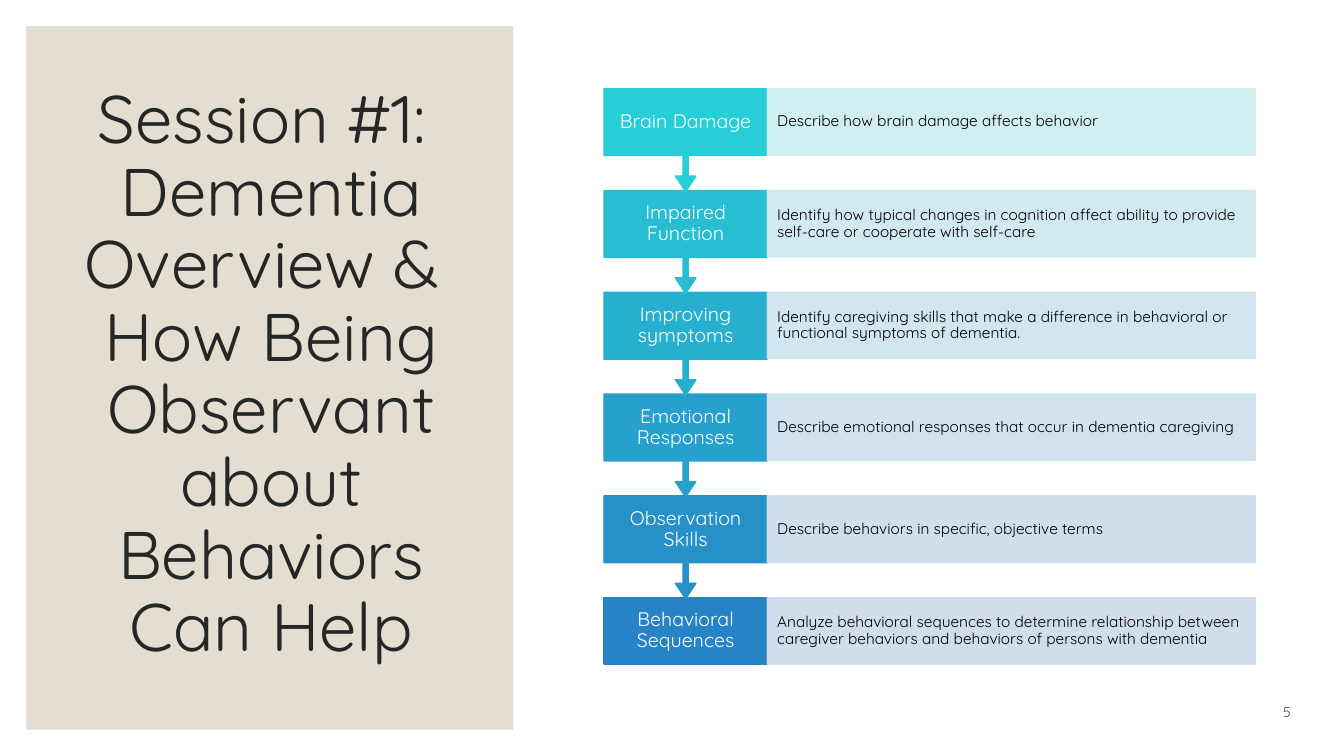
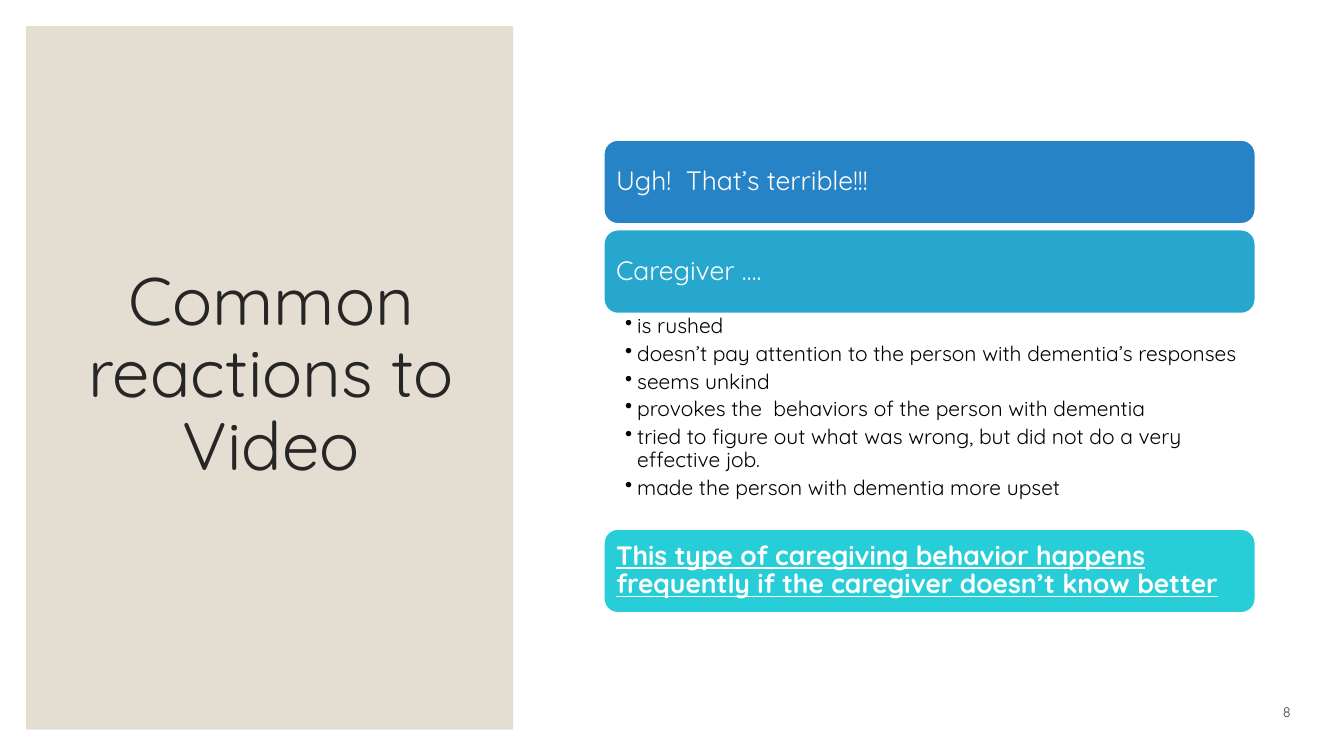
import dataclasses

import lxml.etree
import pptx
import pptx.dml.color
import pptx.enum.shapes
import pptx.enum.text
import pptx.oxml.ns
import pptx.util

Inches, Pt = pptx.util.Inches, pptx.util.Pt
RGB = pptx.dml.color.RGBColor.from_string
SHAPE = pptx.enum.shapes.MSO_SHAPE
ALIGN = pptx.enum.text.PP_ALIGN
ANCHOR = pptx.enum.text.MSO_ANCHOR
qn = pptx.oxml.ns.qn


@dataclasses.dataclass(frozen=True)
class Theme:
    font: str = "Quicksand"
    # Colours
    white: str = "FFFFFF"
    black: str = "000000"
    band: str = "E3DED1"
    title: str = "262626"
    number: str = "404040"
    blue: str = "2683C6"
    sky: str = "27A7CE"
    turquoise: str = "27CED7"
    # Type sizes
    title_size: int = 48
    card_size: int = 19
    bullet_size: int = 15
    stage_size: int = 14
    detail_size: int = 11
    number_size: int = 10


T = Theme()

# Shared content column
LEFT, WIDTH = 5.99, 6.46

# Stage name, detail, stage colour, detail colour
STAGES = [
    ("Brain Damage", "Describe how brain damage affects behavior",
     T.turquoise, "CDEDF0"),
    ("Impaired Function",
     "Identify how typical changes in cognition affect ability to provide "
     "self-care or cooperate with self-care", "27BED4", "CDE8EF"),
    ("Improving symptoms",
     "Identify caregiving skills that make a difference in behavioral or "
     "functional symptoms of dementia.", "27AFD0", "CDE4EE"),
    ("Emotional Responses",
     "Describe emotional responses that occur in dementia caregiving",
     "26A0CD", "CDE0ED"),
    ("Observation Skills", "Describe behaviors in specific, objective terms",
     "2691C9", "CDDCEC"),
    ("Behavioral Sequences",
     "Analyze behavioral sequences to determine relationship between "
     "caregiver behaviors and behaviors of persons with dementia",
     T.blue, "CDD9EA"),
]

REACTIONS = [
    "is rushed",
    "doesn’t pay attention to the person with dementia’s responses",
    "seems unkind",
    "provokes the  behaviors of the person with dementia",
    "tried to figure out what was wrong, but did not do a very effective job.",
    "made the person with dementia more upset",
]


def set_attrs(obj, values):
    for name, value in values.items():
        setattr(obj, name, value)


def write(sp, lines, size, color, align=ALIGN.LEFT, anchor=ANCHOR.MIDDLE,
          insets=(0.1, 0.05, 0.1, 0.05), para=None, font=None):
    """Fill a shape with paragraphs; insets run left, top, right, bottom."""
    tf = sp.text_frame
    sides = ("margin_left", "margin_top", "margin_right", "margin_bottom")
    set_attrs(tf, {"word_wrap": True, "vertical_anchor": anchor})
    set_attrs(tf, dict(zip(sides, map(Inches, insets))))
    for i, line in enumerate(lines):
        p = tf.add_paragraph() if i else tf.paragraphs[0]
        p.text = line
        set_attrs(p, {"alignment": align, "line_spacing": 0.9, **(para or {})})
        for r in p.runs:
            set_attrs(r.font, {"name": T.font, "size": Pt(size), **(font or {})})
            r.font.color.rgb = RGB(color)


def add_text(s, box, lines, size, color, **fmt):
    sp = s.shapes.add_textbox(*map(Inches, box))
    write(sp, lines, size, color, **fmt)
    return sp


def add_block(s, kind, box, fill, line=None, alpha=None):
    """Add a filled shape; alpha is the opacity in percent."""
    sp = s.shapes.add_shape(kind, *map(Inches, box))
    sp.shadow.inherit = False
    sp.fill.solid()
    sp.fill.fore_color.rgb = RGB(fill)
    if line:
        sp.line.width = Pt(1)
        sp.line.color.rgb = RGB(line)
    else:
        sp.line.fill.background()
    if alpha:
        for clr in sp._element.spPr.iter(qn("a:srgbClr")):
            lxml.etree.SubElement(clr, qn("a:alpha"), val=str(alpha * 1000))
    return sp


def add_bullets(p, indent):
    pPr = p._p.get_or_add_pPr()
    pPr.set("marL", str(Inches(indent)))
    pPr.set("indent", str(-Inches(indent)))
    lxml.etree.SubElement(pPr, qn("a:buChar"), char="•")


def add_slide(prs, title, number):
    """Add a slide with the side band, title and page number."""
    s = prs.slides.add_slide(prs.slide_layouts[6])
    add_block(s, SHAPE.RECTANGLE, (0.26, 0.26, 4.83, 6.98), T.band)
    add_text(s, (0.63, 0.61, 4.12, 6.24), [title], T.title_size, T.title,
             align=ALIGN.CENTER)
    add_text(s, (12, 6.9, 0.9, 0.3), [number], T.number_size, T.number,
             align=ALIGN.RIGHT, anchor=ANCHOR.BOTTOM, para={"line_spacing": 1.0})
    return s


def add_stage(s, top, stage, last):
    """Add a stage box, with an arrow to the next one, and its detail."""
    name, detail, color, tint = stage
    name_width, height = 1.62, 0.66
    if last:
        sp = add_block(s, SHAPE.RECTANGLE, (LEFT, top, name_width, height),
                       color, color)
    else:
        sp = add_block(s, SHAPE.DOWN_ARROW_CALLOUT,
                       (LEFT, top, name_width, 1.02), color, color)
        for i, value in enumerate((0.05, 0.1, 0.15, 0.65)):
            sp.adjustments[i] = value
    write(sp, [name], T.stage_size, T.white, align=ALIGN.CENTER,
          insets=(0.11,) * 4)
    sp = add_block(s, SHAPE.RECTANGLE,
                   (LEFT + name_width, top, WIDTH - name_width, height),
                   tint, tint, alpha=90)
    write(sp, [detail], T.detail_size, T.black, insets=(0.1, 0.15, 0.1, 0.15))


def add_card(s, top, text, fill, **font):
    sp = add_block(s, SHAPE.ROUNDED_RECTANGLE, (LEFT, top, WIDTH, 0.83),
                   fill, T.white)
    write(sp, [text], T.card_size, T.white, insets=(0.08,) * 4, font=font)


def build_session(prs):
    s = add_slide(prs, "Session #1:  Dementia Overview & \v"
                       "How Being Observant about Behaviors Can Help", "5")
    # Last stage first, so that each arrow tip lies over the next box
    for i, stage in reversed(list(enumerate(STAGES))):
        add_stage(s, 0.88 + 1.01 * i, stage, i == len(STAGES) - 1)


def build_reactions(prs):
    s = add_slide(prs, "Common reactions to Video", "8")
    add_card(s, 1.39, "Ugh!  That’s terrible!!!", T.blue)
    add_card(s, 2.28, "Caregiver ….", T.sky)
    sp = add_text(s, (LEFT, 3.1, WIDTH, 2.15), REACTIONS, T.bullet_size,
                  T.black, anchor=ANCHOR.TOP, insets=(0.21, 0.03, 0.15, 0.03),
                  para={"space_after": Pt(3.6)})
    for p in sp.text_frame.paragraphs:
        add_bullets(p, 0.12)
    add_card(s, 5.25, "This type of caregiving behavior happens frequently "
             "if the caregiver doesn’t know better", T.turquoise,
             bold=True, underline=True)


def main():
    prs = pptx.Presentation()
    set_attrs(prs, {"slide_width": Inches(13.33), "slide_height": Inches(7.5)})
    build_session(prs)
    build_reactions(prs)
    prs.save("out.pptx")


if __name__ == "__main__":
    main()
